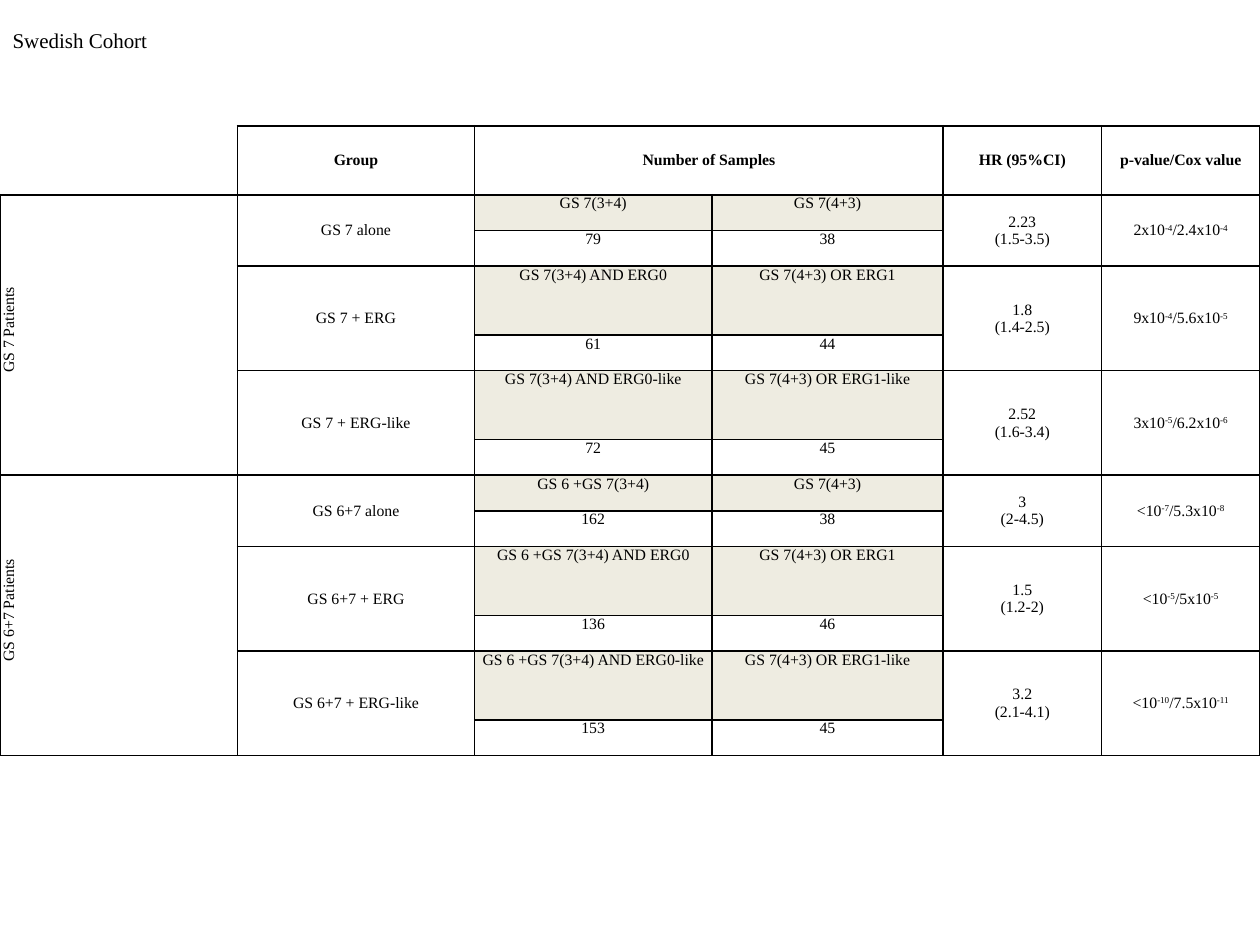
from lxml import etree
from pptx import Presentation
from pptx.dml.color import RGBColor
from pptx.enum.text import MSO_ANCHOR, PP_ALIGN
from pptx.oxml.ns import qn
from pptx.util import Pt

BLACK = RGBColor(0x00, 0x00, 0x00)
BEIGE = RGBColor(0xEE, 0xEC, 0xE1)
TOP, MIDDLE = MSO_ANCHOR.TOP, MSO_ANCHOR.MIDDLE
LEFT, CENTER = PP_ALIGN.LEFT, PP_ALIGN.CENTER
TITLE_ONLY = 5

TALL, SHORT = 39.4, 20.38
COL_WIDTHS = [135.6, 135.6, 135.6, 132.2, 90.5, 90.5]
THIN, HEAVY = 1, 1.5

HEADERS = {1: "Group", 2: "Number of Samples", 4: "HR (95%CI)", 5: "p-value/Cox value"}

# Name, label height, two sample labels, two counts, HR, p-value (^ encloses superscripts)
COHORTS = [
    ("GS 7 Patients", [
        ("GS 7 alone", SHORT, ("GS 7(3+4)", "GS 7(4+3)"), ("79", "38"),
         "2.23\n(1.5-3.5)", "2x10^-4^/2.4x10^-4^"),
        ("GS 7 + ERG", TALL, ("GS 7(3+4) AND ERG0", "GS 7(4+3) OR ERG1"), ("61", "44"),
         "1.8\n(1.4-2.5)", "9x10^-4^/5.6x10^-5^"),
        ("GS 7 + ERG-like", TALL, ("GS 7(3+4) AND ERG0-like", "GS 7(4+3) OR ERG1-like"),
         ("72", "45"), "2.52\n(1.6-3.4)", "3x10^-5^/6.2x10^-6^"),
    ]),
    ("GS 6+7 Patients", [
        ("GS 6+7 alone", SHORT, ("GS 6 +GS 7(3+4)", "GS 7(4+3)"), ("162", "38"),
         "3\n(2-4.5)", "<10^-7^/5.3x10^-8^"),
        ("GS 6+7 + ERG", TALL, ("GS 6 +GS 7(3+4) AND ERG0", "GS 7(4+3) OR ERG1"),
         ("136", "46"), "1.5\n(1.2-2)", "<10^-5^/5x10^-5^"),
        ("GS 6+7 + ERG-like", TALL, ("GS 6 +GS 7(3+4) AND ERG0-like", "GS 7(4+3) OR ERG1-like"),
         ("153", "45"), "3.2\n(2.1-4.1)", "<10^-10^/7.5x10^-11^"),
    ]),
]


class SlideBuilder:
    font = "Times New Roman"
    title_size = 12
    cell_size = 9
    cell_margin = 4.5

    def __init__(self, s):
        self.s = s

    def style(self, r, size, bold=False):
        r.font.name, r.font.size, r.font.bold = self.font, Pt(size), bold
        r.font.color.rgb = BLACK

    def title(self, text, x, y, w, h):
        sp = self.s.shapes.title
        sp.left, sp.top, sp.width, sp.height = Pt(x), Pt(y), Pt(w), Pt(h)
        tf = sp.text_frame
        tf.text = text
        tf.vertical_anchor = TOP
        tf.margin_top = tf.margin_bottom = 0
        p = tf.paragraphs[0]
        p.alignment = LEFT
        self.style(p.runs[0], self.title_size)

    def table(self, x, y, widths, heights):
        frame = self.s.shapes.add_table(len(heights), len(widths), Pt(x), Pt(y),
                                        Pt(sum(widths)), Pt(sum(heights)))
        table = frame.table
        table.first_row = table.horz_banding = False
        for col, width in zip(table.columns, widths):
            col.width = Pt(width)
        for row, height in zip(table.rows, heights):
            row.height = Pt(height)
        for cell in table.iter_cells():
            cell.fill.background()
            cell.margin_left = cell.margin_right = Pt(self.cell_margin)
            cell.margin_top = cell.margin_bottom = 0
        return table

    def cell(self, cell, text, anchor=MIDDLE, bold=False, fill=None):
        cell.vertical_anchor = anchor
        if fill is not None:
            cell.fill.solid()
            cell.fill.fore_color.rgb = fill
        tf = cell.text_frame
        tf.text = text.replace("^", "")
        for p, line in zip(tf.paragraphs, text.split("\n")):
            p.alignment = CENTER
            parts = line.split("^")
            p.runs[0].text = parts[0]
            for i, part in enumerate(parts):
                if i and part:
                    r = p.add_run()
                    r.text = part
                    if i % 2:
                        r._r.get_or_add_rPr().set("baseline", "30000")
            for r in p.runs:
                self.style(r, self.cell_size, bold)

    def vertical_cell(self, cell, text):
        self.cell(cell, text)
        cell._tc.get_or_add_tcPr().set("vert", "vert270")
        cell.text_frame.paragraphs[0]._p.get_or_add_pPr().set("marL", str(Pt(5.7)))

    def borders(self, cell, widths):
        """Widths are left, right, top, bottom; 0 leaves the side open."""
        tcPr = cell._tc.get_or_add_tcPr()
        for i, (side, width) in enumerate(zip("LRTB", widths)):
            ln = etree.Element(qn("a:ln" + side), w=str(Pt(width)))
            if width:
                fill = etree.SubElement(ln, qn("a:solidFill"))
                etree.SubElement(fill, qn("a:srgbClr"), val=str(BLACK))
            else:
                etree.SubElement(ln, qn("a:noFill"))
            tcPr.insert(i, ln)


def main():
    prs = Presentation()
    prs.slide_width, prs.slide_height = Pt(720), Pt(540)
    s = prs.slides.add_slide(prs.slide_layouts[TITLE_ONLY])
    b = SlideBuilder(s)
    b.title("Swedish Cohort", 0, 15.5, 720, 36)

    # Table grid: a header row, then a label row and a count row for each group
    heights = [TALL]
    for _, groups in COHORTS:
        for group in groups:
            heights += [group[1], SHORT]
    table = b.table(0, 72, COL_WIDTHS, heights)

    # Header row
    table.cell(0, 2).merge(table.cell(0, 3))
    for col, text in HEADERS.items():
        b.cell(table.cell(0, col), text, bold=True)

    # Cohorts and their groups
    row = 1
    heavy_rules = {0}
    for cohort, groups in COHORTS:
        heavy_rules.add(row)
        table.cell(row, 0).merge(table.cell(row + 2 * len(groups) - 1, 0))
        b.vertical_cell(table.cell(row, 0), cohort)
        for name, _, labels, counts, hazard, p_value in groups:
            for col, text in ((1, name), (4, hazard), (5, p_value)):
                table.cell(row, col).merge(table.cell(row + 1, col))
                b.cell(table.cell(row, col), text)
            for col, (label, count) in enumerate(zip(labels, counts), start=2):
                b.cell(table.cell(row, col), label, TOP, fill=BEIGE)
                b.cell(table.cell(row + 1, col), count, TOP)
            row += 2

    # Borders: heavy rules around the header and between cohorts, open top left corner
    for row in range(len(heights)):
        top, bottom = (HEAVY if edge in heavy_rules else THIN for edge in (row, row + 1))
        for col in range(len(COL_WIDTHS)):
            corner = row == 0 and col == 0
            right = HEAVY if row == 0 and col == len(COL_WIDTHS) - 1 else THIN
            b.borders(table.cell(row, col),
                      (0 if corner else THIN, right, 0 if corner else top, bottom))

    prs.save("out.pptx")


if __name__ == "__main__":
    main()
